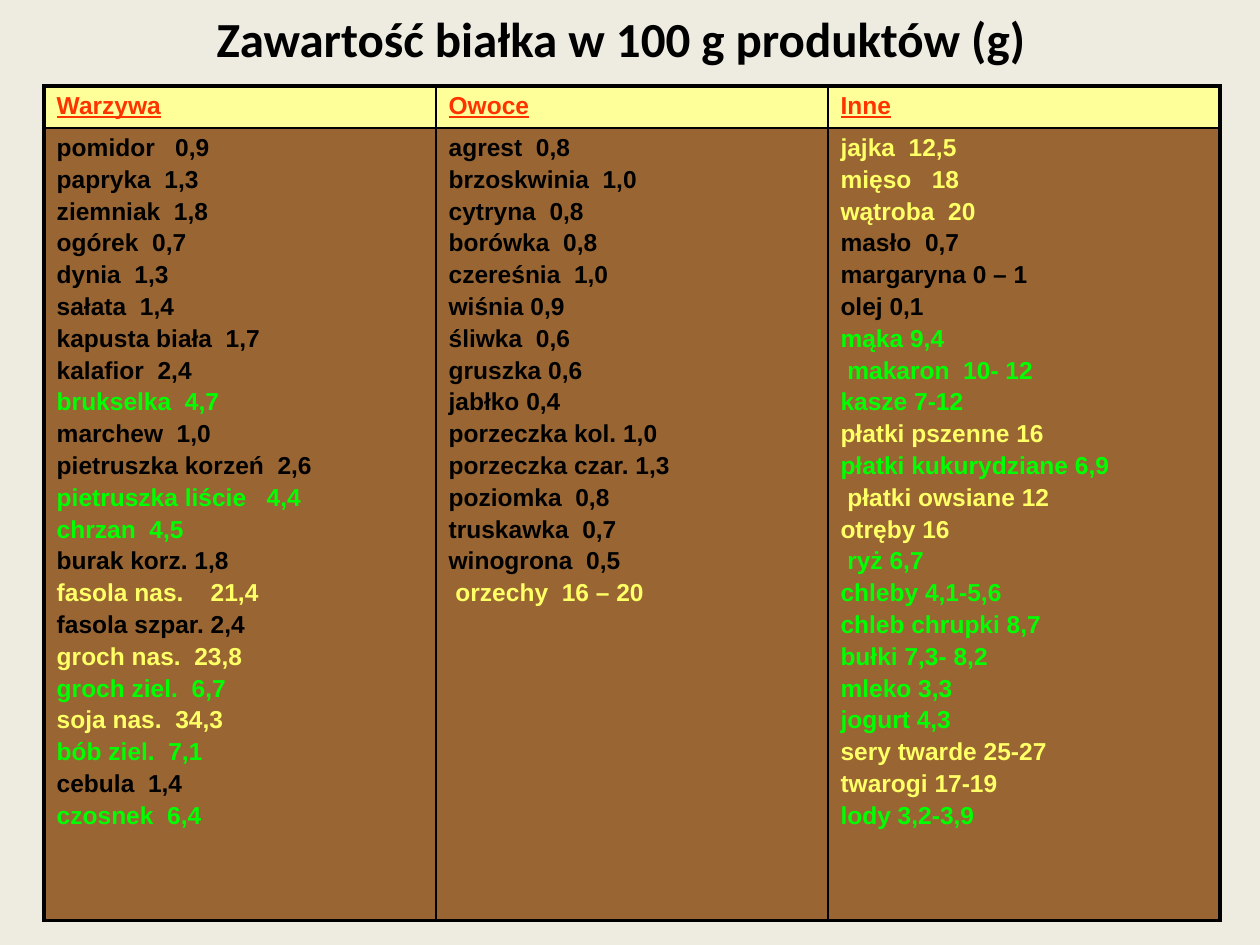
from dataclasses import dataclass

import pptx
import pptx.dml.color
import pptx.enum.text
import pptx.oxml
import pptx.oxml.ns
import pptx.util
from pptx.dml.color import RGBColor
from pptx.util import Cm, Pt

BACKGROUND = RGBColor(0xEE, 0xEC, 0xE1)
BLACK = RGBColor(0x00, 0x00, 0x00)
GREEN = RGBColor(0x00, 0xFF, 0x00)
YELLOW = RGBColor(0xFF, 0xFF, 0x66)
RED = RGBColor(0xFF, 0x33, 0x00)
HEADER_FILL = RGBColor(0xFF, 0xFF, 0x99)
BODY_FILL = RGBColor(0x99, 0x66, 0x33)

OUTER, INNER = Pt(2.25), Pt(1)
ROW_HEIGHTS = [Cm(0.82), Cm(15.98)]
COLUMN_WIDTH = Cm(7.9)


@dataclass
class FoodGroup:
    name: str
    foods: list[str]


GROUPS = [
    FoodGroup("Warzywa", [
        "pomidor   0,9", "papryka  1,3", "ziemniak  1,8", "ogórek  0,7",
        "dynia  1,3", "sałata  1,4", "kapusta biała  1,7", "kalafior  2,4",
        "brukselka  4,7", "marchew  1,0", "pietruszka korzeń  2,6",
        "pietruszka liście   4,4", "chrzan  4,5", "burak korz. 1,8",
        "fasola nas.    21,4", "fasola szpar. 2,4", "groch nas.  23,8",
        "groch ziel.  6,7", "soja nas.  34,3", "bób ziel.  7,1",
        "cebula  1,4", "czosnek  6,4",
    ]),
    FoodGroup("Owoce", [
        "agrest  0,8", "brzoskwinia  1,0", "cytryna  0,8", "borówka  0,8",
        "czereśnia  1,0", "wiśnia 0,9", "śliwka  0,6", "gruszka 0,6",
        "jabłko 0,4", "porzeczka kol. 1,0", "porzeczka czar. 1,3",
        "poziomka  0,8", "truskawka  0,7", "winogrona  0,5",
        " orzechy  16 – 20",
    ]),
    FoodGroup("Inne", [
        "jajka  12,5", "mięso   18", "wątroba  20", "masło  0,7",
        "margaryna 0 – 1", "olej 0,1", "mąka 9,4", " makaron  10- 12",
        "kasze 7-12", "płatki pszenne 16", "płatki kukurydziane 6,9",
        " płatki owsiane 12", "otręby 16", " ryż 6,7", "chleby 4,1-5,6",
        "chleb chrupki 8,7", "bułki 7,3- 8,2", "mleko 3,3", "jogurt 4,3",
        "sery twarde 25-27", "twarogi 17-19", "lody 3,2-3,9",
    ]),
]


def protein_color(food: str) -> RGBColor:
    """Colour a food by the lower bound of its protein content."""
    number = next(word for word in food.split() if word[0].isdigit())
    grams = float(number.split("-")[0].replace(",", "."))
    return BLACK if grams < 3 else GREEN if grams < 12 else YELLOW


def write(p, text: str, *, size: float = 14, font: str = "Arial",
          color: RGBColor = BLACK, underline: bool = False,
          align=pptx.enum.text.PP_ALIGN.LEFT, before: float = 0) -> None:
    p.alignment = align
    p.space_before = Pt(before)
    r = p.add_run()
    r.text = text
    r.font.size = Pt(size)
    r.font.name = font
    r.font.bold = True
    r.font.underline = underline
    r.font.color.rgb = color


def set_borders(cell, **widths: int) -> None:
    """Draw the cell edges; widths are keyed L, R, T, B in that order."""
    tc_pr = cell._tc.get_or_add_tcPr()
    for i, (side, width) in enumerate(widths.items()):
        tc_pr.insert(i, pptx.oxml.parse_xml(
            f'<a:ln{side} {pptx.oxml.ns.nsdecls("a")} w="{int(width)}">'
            f'<a:solidFill><a:srgbClr val="{BLACK}"/></a:solidFill>'
            f'</a:ln{side}>'))


def add_title(s, text: str) -> None:
    sp = s.shapes.add_textbox(Cm(0.69), Cm(0), Cm(23.65), Cm(1.52))
    tf = sp.text_frame
    tf.word_wrap = True
    tf.vertical_anchor = pptx.enum.text.MSO_ANCHOR.MIDDLE
    write(tf.paragraphs[0], text, size=28, font="Calibri",
          align=pptx.enum.text.PP_ALIGN.CENTER)


def add_food_table(s, groups: list[FoodGroup]) -> None:
    last = len(groups) - 1
    table = s.shapes.add_table(2, len(groups), Cm(0.89), Cm(1.73),
                               COLUMN_WIDTH * len(groups),
                               sum(ROW_HEIGHTS)).table
    table.first_row = table.horz_banding = False
    for row, height in zip(table.rows, ROW_HEIGHTS):
        row.height = height

    for col, group in enumerate(groups):
        table.columns[col].width = COLUMN_WIDTH
        header, body = table.cell(0, col), table.cell(1, col)

        # Fills and borders
        for cell, fill in ((header, HEADER_FILL), (body, BODY_FILL)):
            cell.fill.solid()
            cell.fill.fore_color.rgb = fill
            set_borders(cell,
                        L=OUTER if col == 0 else INNER,
                        R=OUTER if col == last else INNER,
                        T=OUTER if cell is header else INNER,
                        B=OUTER if cell is body else INNER)

        # Group name and its foods
        write(header.text_frame.paragraphs[0], group.name,
              color=RED, underline=True)
        tf = body.text_frame
        for i, food in enumerate(group.foods):
            p = tf.add_paragraph() if i else tf.paragraphs[0]
            write(p, food, color=protein_color(food), before=2.45 if i else 0)


def main() -> None:
    prs = pptx.Presentation()
    prs.slide_width, prs.slide_height = Cm(25.4), Cm(19.05)
    s = prs.slides.add_slide(prs.slide_layouts[6])
    s.background.fill.solid()
    s.background.fill.fore_color.rgb = BACKGROUND

    add_title(s, "Zawartość białka w 100 g produktów (g)")
    add_food_table(s, GROUPS)
    prs.save("out.pptx")


if __name__ == "__main__":
    main()
